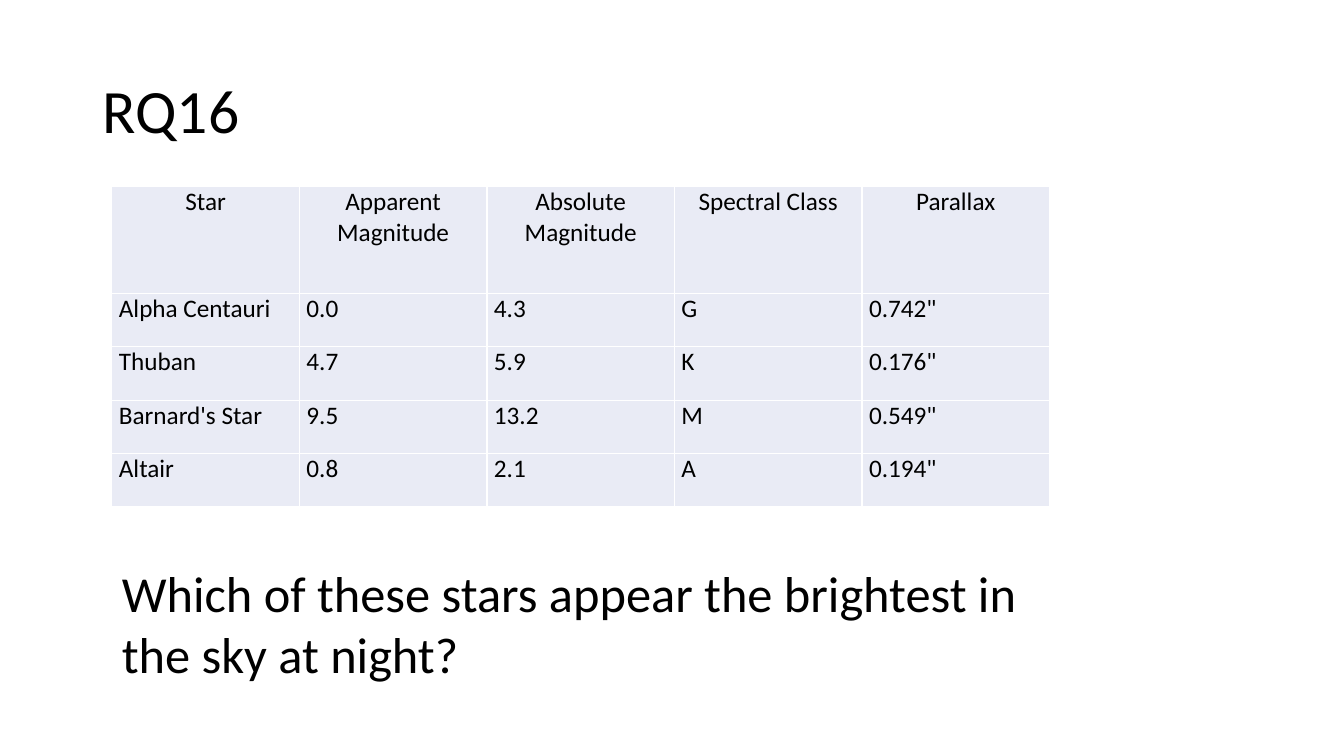
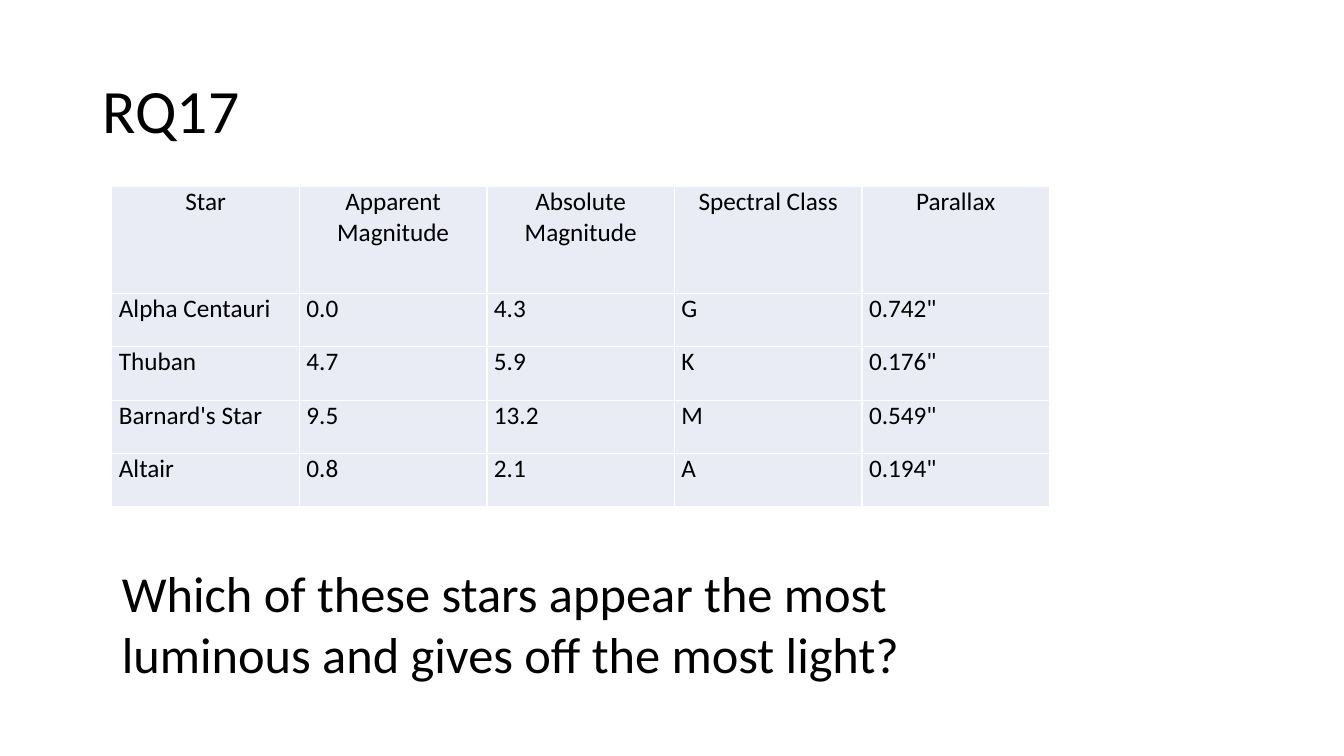
from lxml import etree
from pptx import Presentation
from pptx.dml.color import RGBColor
from pptx.enum.text import MSO_ANCHOR, PP_ALIGN
from pptx.oxml.ns import qn
from pptx.util import Inches, Pt

CENTER, LEFT = PP_ALIGN.CENTER, PP_ALIGN.LEFT
TOP, MIDDLE = MSO_ANCHOR.TOP, MSO_ANCHOR.MIDDLE

BLACK = RGBColor(0x00, 0x00, 0x00)
WHITE = RGBColor(0xFF, 0xFF, 0xFF)
PALE_BLUE = RGBColor(0xE9, 0xEB, 0xF5)
FONT = "Calibri"

CONTENT_LEFT = Inches(1.11)
TABLE_TOP = Inches(1.85)
COLUMN_WIDTH = Inches(1.86)
ROW_HEIGHT = Inches(0.53)
CELL_MARGIN = Inches(0.07)

STARS = [
    ("Star", "Apparent Magnitude", "Absolute Magnitude", "Spectral Class", "Parallax"),
    ("Alpha Centauri", "0.0", "4.3", "G", '0.742"'),
    ("Thuban", "4.7", "5.9", "K", '0.176"'),
    ("Barnard's Star", "9.5", "13.2", "M", '0.549"'),
    ("Altair", "0.8", "2.1", "A", '0.194"'),
]
QUESTIONS = [
    ("RQ16", "Which of these stars appear the brightest in the sky at night?"),
    ("RQ17", "Which of these stars appear the most luminous and gives off the most light?"),
]


def write(frame, text, size, anchor=TOP):
    """Fill a text frame with one paragraph in the deck's font and return it."""
    frame.word_wrap = True
    frame.vertical_anchor = anchor
    para = frame.paragraphs[0]
    para.text = text
    para.font.name = FONT
    para.font.size = Pt(size)
    para.font.color.rgb = BLACK
    return para


def add_borders(cell):
    """Draw thin white lines on all four sides; they must precede the fill in the XML."""
    properties = cell._tc.get_or_add_tcPr()
    for index, side in enumerate(("a:lnL", "a:lnR", "a:lnT", "a:lnB")):
        line = etree.Element(qn(side), w=str(Pt(1)))
        fill = etree.SubElement(line, qn("a:solidFill"))
        etree.SubElement(fill, qn("a:srgbClr"), val=str(WHITE))
        properties.insert(index, line)


deck = Presentation()
deck.slide_width, deck.slide_height = Inches(13.33), Inches(7.5)
blank_layout = deck.slide_layouts[6]

for title, question in QUESTIONS:
    page = deck.slides.add_slide(blank_layout)

    title_box = page.shapes.add_textbox(Inches(0.92), Inches(0.4), Inches(11.5), Inches(1.45))
    write(title_box.text_frame, title, 44, MIDDLE).line_spacing = 0.9

    column_count = len(STARS[0])
    table = page.shapes.add_table(
        len(STARS), column_count, CONTENT_LEFT, TABLE_TOP,
        COLUMN_WIDTH * column_count, ROW_HEIGHT * (len(STARS) + 1),
    ).table
    for column in table.columns:
        column.width = COLUMN_WIDTH
    for row_index, values in enumerate(STARS):
        is_header = row_index == 0
        table.rows[row_index].height = ROW_HEIGHT * (2 if is_header else 1)
        for column_index, value in enumerate(values):
            cell = table.cell(row_index, column_index)
            cell.margin_left = cell.margin_right = CELL_MARGIN
            cell.margin_top = cell.margin_bottom = 0
            cell.fill.solid()
            cell.fill.fore_color.rgb = PALE_BLUE
            add_borders(cell)
            para = write(cell.text_frame, value, 18)
            para.font.bold = False
            para.alignment = CENTER if is_header else LEFT

    question_box = page.shapes.add_textbox(CONTENT_LEFT, Inches(5.53), Inches(9.69), Inches(1.31))
    write(question_box.text_frame, question, 36)

deck.save("out.pptx")
